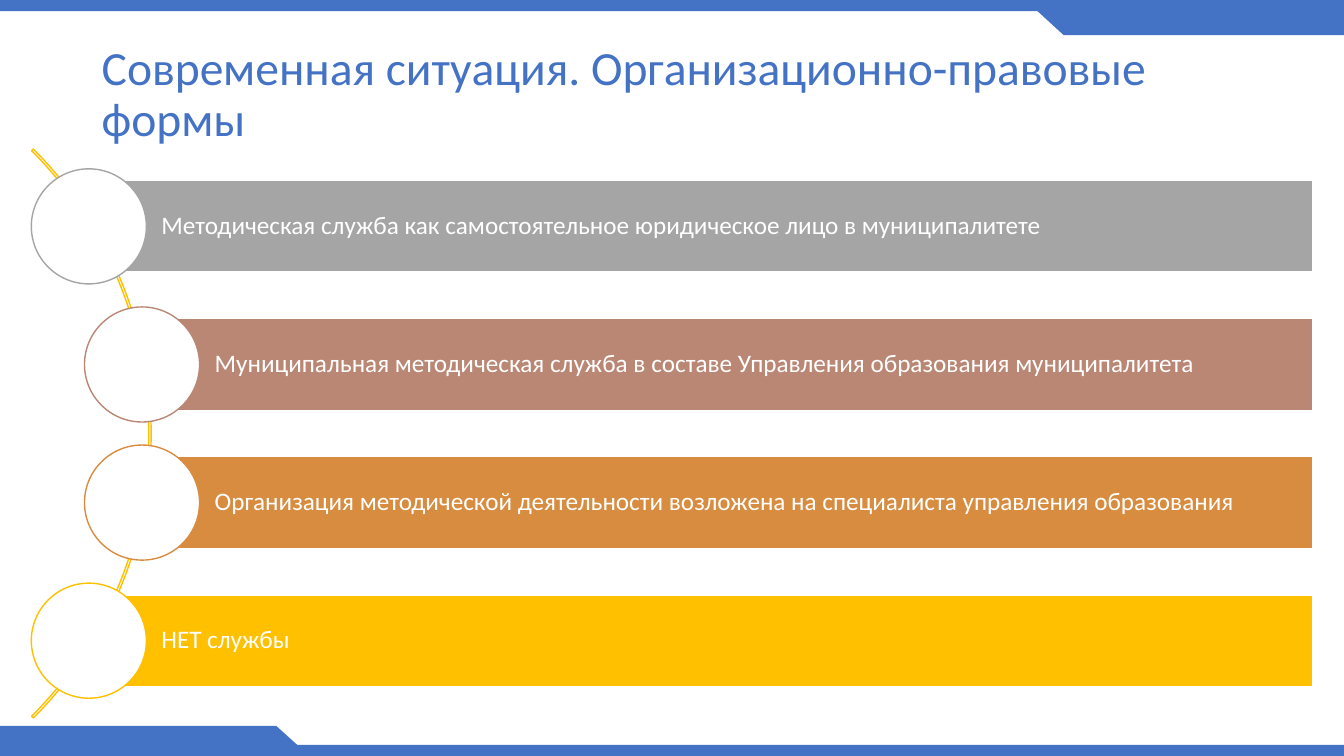
from pptx import Presentation
from pptx.dml.color import RGBColor as Rgb
from pptx.enum.shapes import MSO_SHAPE as Kind
from pptx.enum.text import MSO_ANCHOR as Anchor, MSO_AUTO_SIZE as Auto, PP_ALIGN as Align
from pptx.util import Cm, Pt

WIDE, HIGH = 33.87, 19.05
BLUE, WHITE, GOLD = "4472C4", "FFFFFF", "FFC000"
TOP, STEP, BAR, DISC, RIGHT = 4.55, 3.48, 2.31, 2.9, 33.08
ROWS = [
    (2.24, "A5A5A5", "Методическая служба как самостоятельное юридическое лицо в муниципалитете"),
    (3.58, "BA8775", "Муниципальная методическая служба в составе Управления образования муниципалитета"),
    (3.58, "D88C3F", "Организация методической деятельности возложена на специалиста управления образования"),
    (2.24, GOLD, "НЕТ службы"),
]


def paint(target, color):
    target.solid()
    target.fore_color.rgb = Rgb.from_string(color)


def draw(slide, kind, left, top, width, height, fill=None, line=None):
    shape = slide.shapes.add_shape(kind, Cm(left), Cm(top), Cm(width), Cm(height))
    shape.shadow.inherit = False
    if fill:
        paint(shape.fill, fill)
    else:
        shape.fill.background()
    if line:
        paint(shape.line.fill, line)
        shape.line.width = Pt(1)
    else:
        shape.line.fill.background()
    return shape


def write(frame, text, size, color):
    frame.word_wrap = True
    frame.auto_size = Auto.NONE
    frame.vertical_anchor = Anchor.MIDDLE
    para = frame.paragraphs[0]
    para.alignment = Align.LEFT
    para.line_spacing = 0.9
    run = para.add_run()
    run.text = text
    run.font.name = "Calibri"
    run.font.size = Pt(size)
    run.font.color.rgb = Rgb.from_string(color)


def add_frame(slide):
    for top in (0, HIGH - 0.28):
        draw(slide, Kind.RECTANGLE, 0, top, WIDE, 0.28, BLUE)
    draw(slide, Kind.RECTANGLE, 26.8, 0.13, WIDE - 26.8, 0.76, BLUE)
    draw(slide, Kind.FLOWCHART_MERGE, 25.96, 0.11, 1.68, 0.77, BLUE)
    draw(slide, Kind.RECTANGLE, 0, HIGH - 0.76, 6.96, 0.76, BLUE)
    draw(slide, Kind.FLOWCHART_MERGE, 6.12, HIGH - 0.76, 1.68, 0.76, BLUE).rotation = 180


def add_title(slide, text):
    title = slide.shapes.title
    title.left, title.top, title.width, title.height = Cm(2.31), Cm(1.02), Cm(29.24), Cm(2.77)
    write(title.text_frame, text, 34, BLUE)


def add_arc(slide):
    arc = draw(slide, Kind.BLOCK_ARC, -16.46, 0.79, 20.27, 20.27, line=GOLD)
    for index, value in enumerate((189, 27, 0.003)):
        arc.adjustments[index] = value


def add_row(slide, index, left, color, text):
    top = TOP + index * STEP
    bar = draw(slide, Kind.RECTANGLE, left, top, RIGHT - left, BAR, color, WHITE)
    frame = bar.text_frame
    frame.margin_left = Cm(1.83)
    frame.margin_top = frame.margin_right = frame.margin_bottom = Cm(0.13)
    write(frame, text, 18, WHITE)
    draw(slide, Kind.OVAL, left - DISC / 2, top + (BAR - DISC) / 2, DISC, DISC, WHITE, color)


def main():
    deck = Presentation()
    deck.slide_width, deck.slide_height = Cm(WIDE), Cm(HIGH)
    slide = deck.slides.add_slide(deck.slide_layouts[5])
    add_frame(slide)
    add_title(slide, "Современная ситуация. Организационно-правовые формы")
    add_arc(slide)
    for index, row in enumerate(ROWS):
        add_row(slide, index, *row)
    deck.save("out.pptx")


if __name__ == "__main__":
    main()
